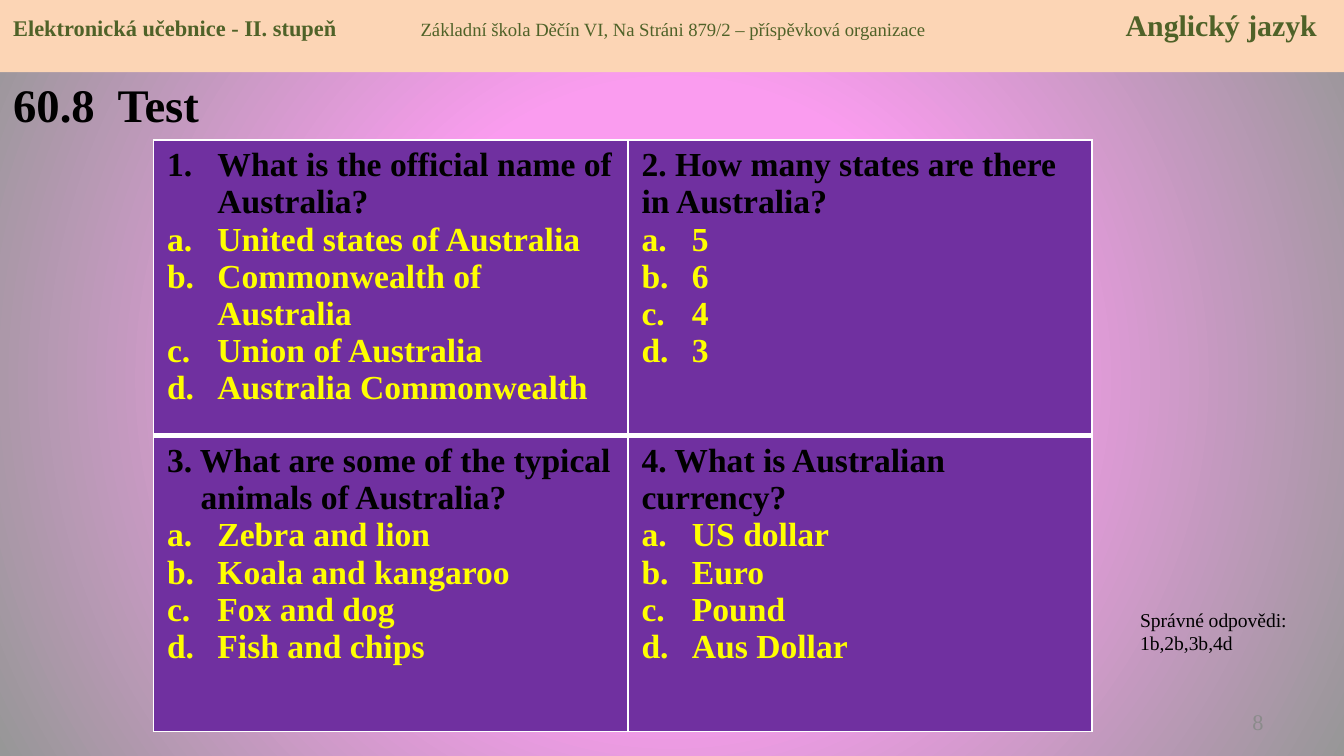
from lxml import etree
from pptx import Presentation
from pptx.dml.color import RGBColor
from pptx.enum.shapes import MSO_SHAPE
from pptx.enum.text import MSO_ANCHOR, PP_ALIGN
from pptx.oxml import parse_xml
from pptx.oxml.ns import qn
from pptx.util import Pt

RECTANGLE = MSO_SHAPE.RECTANGLE
TOP, MIDDLE = MSO_ANCHOR.TOP, MSO_ANCHOR.MIDDLE
LEFT, RIGHT = PP_ALIGN.LEFT, PP_ALIGN.RIGHT
FONT = "Times New Roman"
DRAWING = "http://schemas.openxmlformats.org/drawingml/2006/main"
COLORS = {
    "header": "FCD5B5", "header_text": "4F6228", "cell": "7030A0",
    "border": "FFFFFF", "question": "000000", "answer": "FFFF00",
    "text": "000000", "page": "8B8B8B", "glow": "FA9CEF", "edge": "979797",
}
HANGING = 27
QUIZ = [
    [
        ("What is the official name of Australia?", HANGING, "arabicPeriod",
         ["United states of Australia", "Commonwealth of Australia",
          "Union of Australia", "Australia Commonwealth"]),
        ("2. How many states are there in Australia?", 0, None,
         ["5", "6", "4", "3"]),
    ],
    [
        ("3. What are some of the typical animals of Australia?", 18, None,
         ["Zebra and lion", "Koala and kangaroo", "Fox and dog",
          "Fish and chips"]),
        ("4. What is Australian currency?", 0, None,
         ["US dollar", "Euro", "Pound", "Aus Dollar"]),
    ],
]


def rgb(name):
    return RGBColor.from_string(COLORS[name])


def add_run(paragraph, text, size, color, bold=False):
    run = paragraph.add_run()
    run.text = text
    run.font.name = FONT
    run.font.size = Pt(size)
    run.font.bold = bold
    run.font.color.rgb = rgb(color)


def set_tabs(paragraph, *positions):
    tabs = etree.SubElement(paragraph._p.get_or_add_pPr(), qn("a:tabLst"))
    for position in positions:
        etree.SubElement(tabs, qn("a:tab"), pos=str(Pt(position)), algn="l")


def set_indent(paragraph, hanging, numbering=None):
    properties = paragraph._p.get_or_add_pPr()
    properties.set("marL", str(Pt(hanging)))
    properties.set("indent", str(-Pt(hanging)))
    if numbering:
        etree.SubElement(properties, qn("a:buAutoNum"), type=numbering)


def set_background(slide):
    slide.background.fill.solid()
    solid = slide._element.find(".//" + qn("p:bgPr")).find(qn("a:solidFill"))
    gradient = parse_xml(
        f'<a:gradFill xmlns:a="{DRAWING}" rotWithShape="1"><a:gsLst>'
        f'<a:gs pos="38000"><a:srgbClr val="{COLORS["glow"]}"/></a:gs>'
        f'<a:gs pos="100000"><a:srgbClr val="{COLORS["edge"]}"/></a:gs>'
        '</a:gsLst><a:path path="circle">'
        '<a:fillToRect l="50000" t="50000" r="50000" b="50000"/>'
        '</a:path></a:gradFill>')
    solid.getparent().replace(solid, gradient)


def add_header(slide):
    header = slide.shapes.add_shape(RECTANGLE, 0, 0, Pt(720), Pt(38.7))
    header.shadow.inherit = False
    header.fill.solid()
    header.fill.fore_color.rgb = rgb("header")
    header.line.fill.background()
    header.text_frame.vertical_anchor = TOP
    paragraph = header.text_frame.paragraphs[0]
    paragraph.alignment = LEFT
    set_tabs(paragraph, 218.3, 596)
    add_run(paragraph, "Elektronická učebnice - II. stupeň\t", 12,
            "header_text", True)
    add_run(paragraph, "Základní škola Děčín VI, Na Stráni 879/2 – "
            "příspěvková organizace\t", 10, "header_text")
    add_run(paragraph, "Anglický jazyk", 16, "header_text", True)


def add_text(slide, box, lines, size, color, bold=False, align=LEFT, tab=None):
    frame = slide.shapes.add_textbox(*map(Pt, box)).text_frame
    frame.word_wrap = True
    for index, line in enumerate(lines):
        paragraph = frame.add_paragraph() if index else frame.paragraphs[0]
        paragraph.alignment = align
        if tab:
            set_tabs(paragraph, tab)
        add_run(paragraph, line, size, color, bold)


def set_borders(cell, top, bottom):
    properties = cell._tc.get_or_add_tcPr()
    for side, width in (("L", 1), ("R", 1), ("T", top), ("B", bottom)):
        line = etree.SubElement(properties, qn(f"a:ln{side}"),
                                w=str(Pt(width)))
        fill = etree.SubElement(line, qn("a:solidFill"))
        etree.SubElement(fill, qn("a:srgbClr"), val=COLORS["border"])


def fill_cell(cell, question, hanging, numbering, answers):
    cell.fill.solid()
    cell.fill.fore_color.rgb = rgb("cell")
    heading = cell.text_frame.paragraphs[0]
    set_indent(heading, hanging, numbering)
    add_run(heading, question, 18, "question", True)
    for answer in answers:
        option = cell.text_frame.add_paragraph()
        set_indent(option, HANGING, "alphaLcPeriod")
        add_run(option, answer, 18, "answer", True)


def add_quiz(slide):
    quiz = slide.shapes.add_table(2, 2, Pt(82.3), Pt(75), Pt(502.6),
                                  Pt(317)).table
    quiz.first_row = False
    quiz.horz_banding = False
    for column, width in zip(quiz.columns, (254.2, 248.4)):
        column.width = Pt(width)
    for row_index, questions in enumerate(QUIZ):
        quiz.rows[row_index].height = Pt(158.5)
        top, bottom = ((1, 3), (3, 1))[row_index]
        for column_index, content in enumerate(questions):
            cell = quiz.cell(row_index, column_index)
            set_borders(cell, top, bottom)
            fill_cell(cell, *content)


def main():
    presentation = Presentation()
    presentation.slide_width = Pt(720)
    presentation.slide_height = Pt(405)
    slide = presentation.slides.add_slide(presentation.slide_layouts[6])
    set_background(slide)
    add_header(slide)
    add_text(slide, (0, 37, 115.2, 37.4), ["60.8\tTest"], 25, "text",
             bold=True, tab=56)
    add_quiz(slide)
    add_text(slide, (603.7, 322, 94.3, 32.4),
             ["Správné odpovědi:", "1b,2b,3b,4d"], 10.5, "text")
    add_text(slide, (644, 376, 40, 21.6), ["8"], 12, "page", align=RIGHT)
    presentation.save("out.pptx")


if __name__ == "__main__":
    main()
